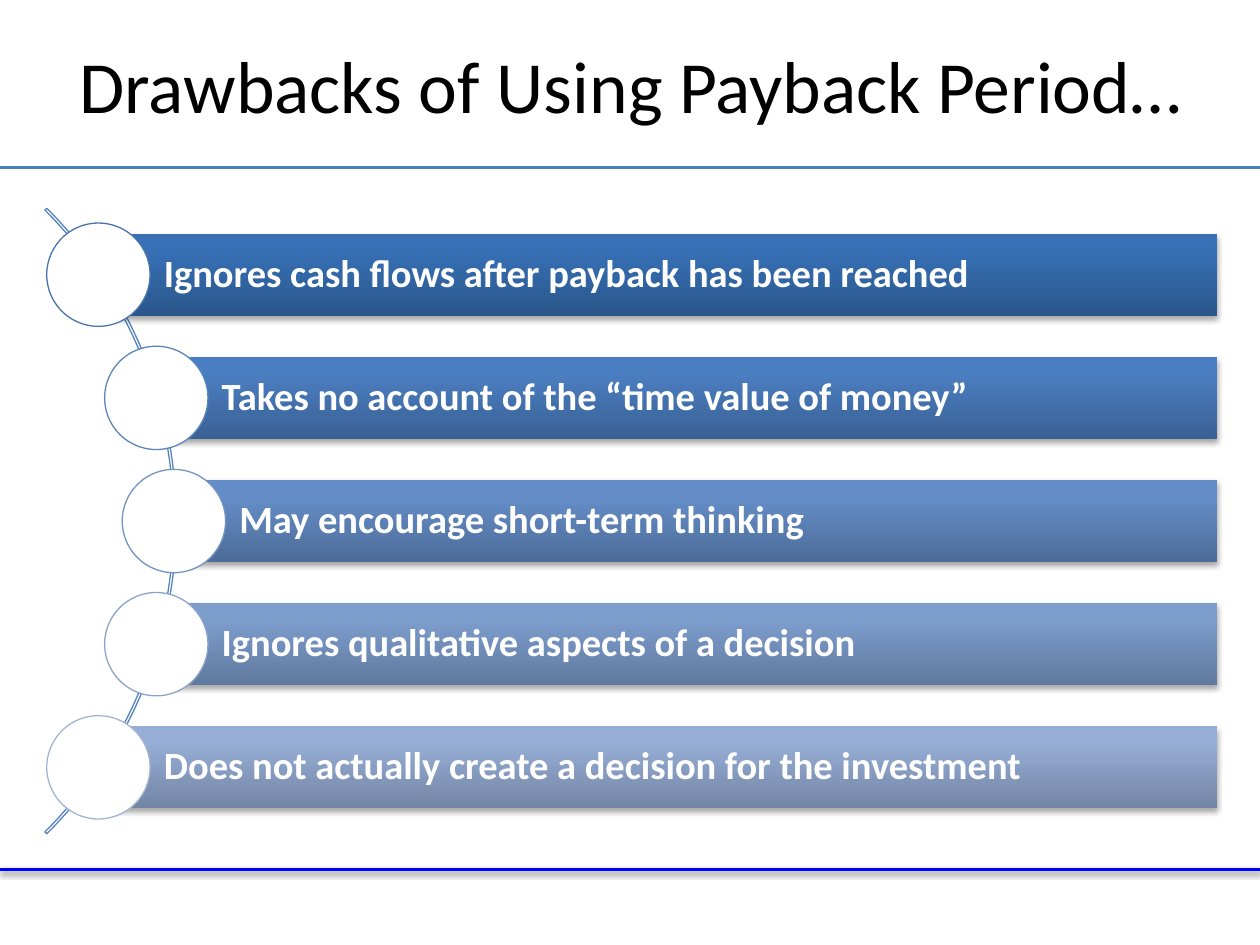
import math

import pptx
import pptx.dml.color
import pptx.enum.shapes
import pptx.enum.text
import pptx.oxml
import pptx.oxml.ns
import pptx.util

SHAPE = pptx.enum.shapes.MSO_SHAPE
ALIGN = pptx.enum.text.PP_ALIGN
W, H = 10, 7.5
NS = pptx.oxml.ns.nsdecls("a")

# Text, gradient from bottom to top, circle outline
ITEMS = [
    ("Ignores cash flows after payback has been reached",
     ("2A568B", "3770B5", "3570B8"), "4875AC"),
    ("Takes no account of the “time value of money”",
     ("3A6194", "4B7EC1", "497EC4"), "5B84B9"),
    ("May encourage short-term thinking",
     ("4D6C99", "648DC7", "638DCA"), "7393C1"),
    ("Ignores qualitative aspects of a decision",
     ("60799E", "7D9DCD", "7C9DD0"), "8BA4CA"),
    ("Does not actually create a decision for the investment",
     ("7385A4", "96ADD5", "95ADD7"), "A2B4D4"),
]


def rgb(value):
    return pptx.dml.color.RGBColor.from_string(value)


def inches(*values):
    return [pptx.util.Inches(v) for v in values]


def write(tf, text, size=22, color="FFFFFF", bold=False, align=ALIGN.LEFT,
          spacing=1.0, margins=(0.1, 0.05, 0.1, 0.05)):
    tf.word_wrap = True
    tf.auto_size = pptx.enum.text.MSO_AUTO_SIZE.NONE
    tf.vertical_anchor = pptx.enum.text.MSO_ANCHOR.MIDDLE
    (tf.margin_left, tf.margin_top,
     tf.margin_right, tf.margin_bottom) = inches(*margins)
    p = tf.paragraphs[0]
    p.alignment, p.line_spacing = align, spacing
    r = p.add_run()
    r.text = text
    r.font.name, r.font.size, r.font.bold = "Calibri", pptx.util.Pt(size), bold
    r.font.color.rgb = rgb(color)


def set_effects(sp, opacity=0, distance=0):
    """Give a soft downward shadow, or none when opacity is zero."""
    shadow = ""
    if opacity:
        shadow = (f'<a:outerShdw blurRad="{pptx.util.Pt(3.1)}" '
                  f'dist="{pptx.util.Pt(distance)}" dir="5400000" rotWithShape="0">'
                  f'<a:srgbClr val="000000"><a:alpha val="{opacity * 1000}"/>'
                  '</a:srgbClr></a:outerShdw>')
    sp._element.spPr.append(
        pptx.oxml.parse_xml(f"<a:effectLst {NS}>{shadow}</a:effectLst>"))


def fill_gradient(sp, colors):
    stops = "".join(f'<a:gs pos="{pos * 1000}"><a:srgbClr val="{c}"/></a:gs>'
                    for pos, c in zip((0, 80, 100), colors))
    sp._element.spPr.append(pptx.oxml.parse_xml(
        f'<a:gradFill {NS} rotWithShape="1"><a:gsLst>{stops}</a:gsLst>'
        '<a:lin ang="16200000" scaled="0"/></a:gradFill>'))


def add_outlined(s, kind, box, line, fill=None):
    sp = s.shapes.add_shape(kind, *inches(*box))
    if fill:
        sp.fill.solid()
        sp.fill.fore_color.rgb = rgb(fill)
    else:
        sp.fill.background()
    sp.line.color.rgb, sp.line.width = rgb(line), pptx.util.Pt(0.75)
    sp.shadow.inherit = False
    return sp


def add_rule(s, y, color, width, **shadow):
    line = s.shapes.add_connector(
        pptx.enum.shapes.MSO_CONNECTOR.STRAIGHT, *inches(0, y, W, y))
    line.line.color.rgb, line.line.width = rgb(color), pptx.util.Pt(width)
    set_effects(line, **shadow)


def add_title(s, box, text):
    title = s.shapes.title
    title.left, title.top, title.width, title.height = inches(*box)
    write(title.text_frame, text, size=42, color="000000", align=ALIGN.CENTER)


def add_curved_list(s, box, items):
    left, top, width, height = box
    circle, bar = 0.82, 0.65
    pitch = (height - circle) / (len(items) - 1)
    mid_y = top + height / 2

    # Thin arc that the circles follow
    radius, arc_x = 3.51, -2.11
    arc = add_outlined(s, SHAPE.BLOCK_ARC,
                       (arc_x - radius, mid_y - radius, 2 * radius, 2 * radius),
                       "5483BE")
    for i, value in enumerate((189, 27, 0.003)):
        arc.adjustments[i] = value

    for i, (text, colors, outline) in enumerate(items):
        y = top + circle / 2 + i * pitch
        x = arc_x + math.sqrt((radius - 0.02) ** 2 - (y - mid_y) ** 2)

        # Bar from the circle's centre to the right edge
        sp = s.shapes.add_shape(
            SHAPE.RECTANGLE, *inches(x, y - bar / 2, left + width - x, bar))
        sp.name = f"Bar {i + 1}"
        fill_gradient(sp, colors)
        sp.line.fill.background()
        set_effects(sp, opacity=35, distance=1.8)
        write(sp.text_frame, text, bold=True, spacing=0.9,
              margins=(0.52, 0.06, 0.06, 0.06))

        # Circle
        add_outlined(s, SHAPE.OVAL,
                     (x - circle / 2, y - circle / 2, circle, circle),
                     outline, "FFFFFF")


def main():
    prs = pptx.Presentation()
    prs.slide_width, prs.slide_height = inches(W, H)
    s = prs.slides.add_slide(prs.slide_layouts[5])
    add_rule(s, 0.92 * H, "0000FF", 2, opacity=38, distance=1.6)
    add_rule(s, 1.33, "4B7EBC", 1.75)
    add_title(s, (0.28, 0.08, 9.45, 1.17), "Drawbacks of Using Payback Period…")
    add_curved_list(s, (0.36, 1.77, 9.3, 4.73), ITEMS)
    prs.save("out.pptx")


if __name__ == "__main__":
    main()
